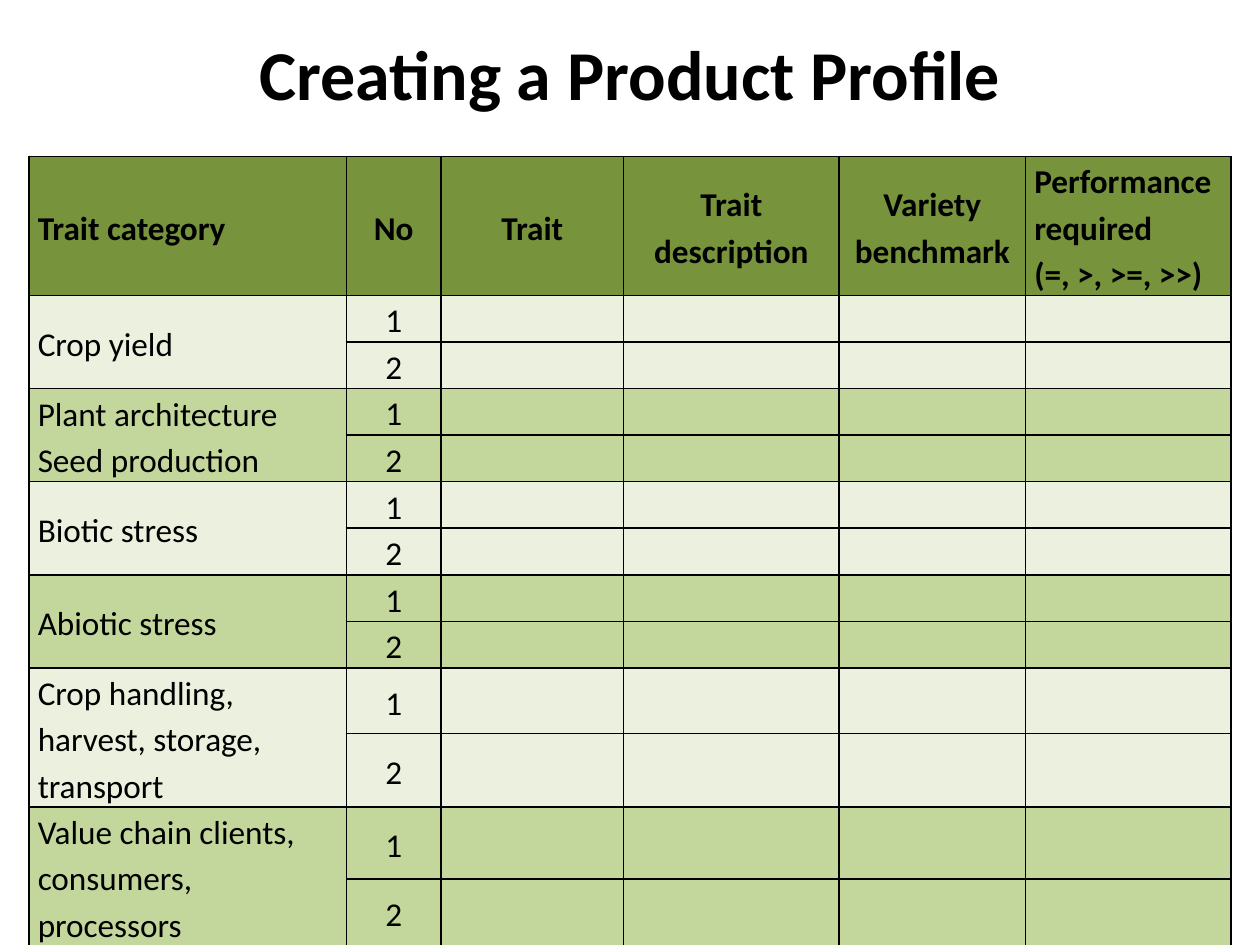
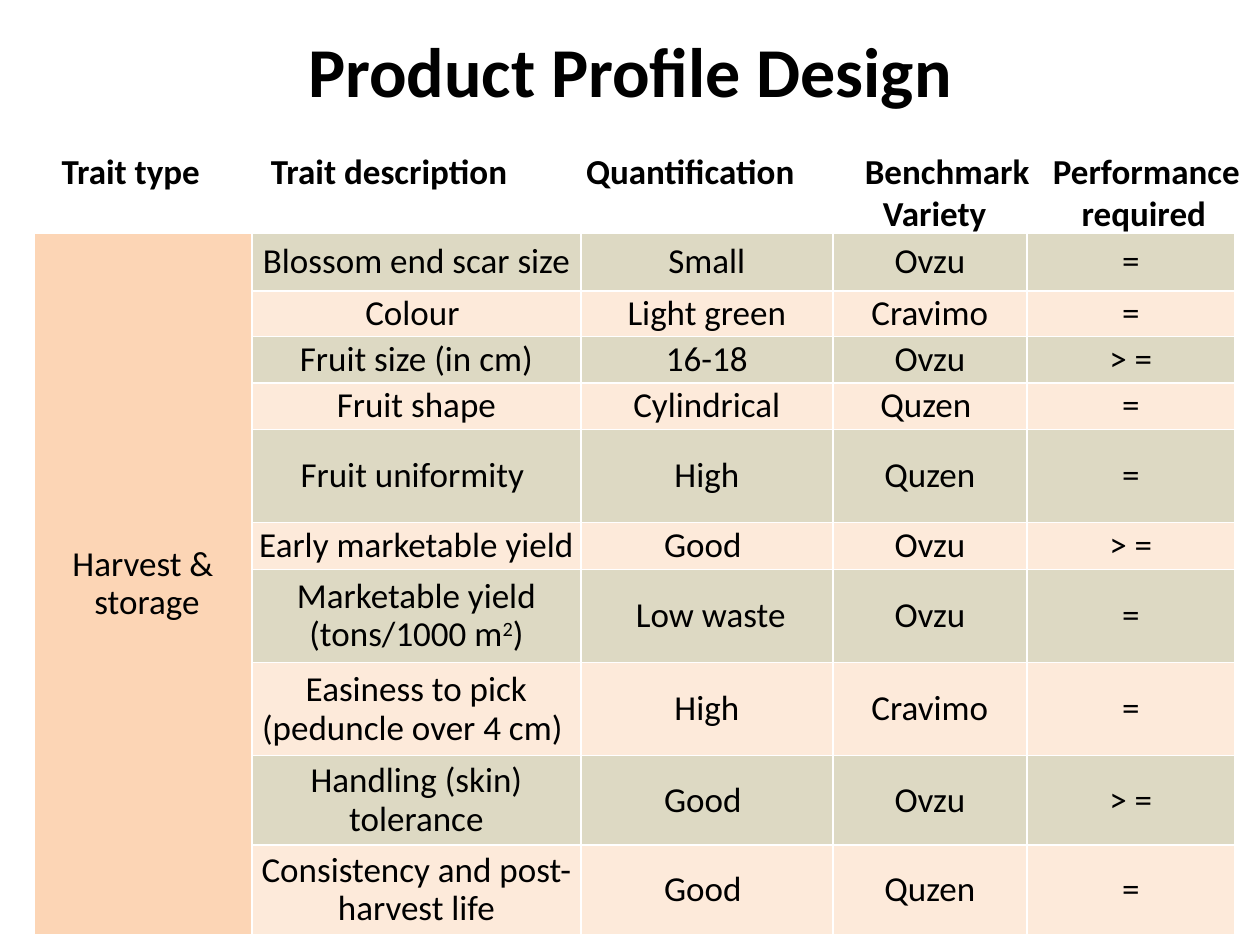
from pptx import Presentation
from pptx.dml.color import RGBColor
from pptx.enum.text import MSO_ANCHOR as Anchor, MSO_AUTO_SIZE as AutoSize, PP_ALIGN as Align
from pptx.oxml.ns import qn
from pptx.util import Inches, Pt
from lxml.etree import SubElement

FONT = "Calibri"
BLACK = RGBColor(0x00, 0x00, 0x00)
WHITE = RGBColor(0xFF, 0xFF, 0xFF)
HEADER_GREEN = RGBColor(0x77, 0x93, 0x3C)
PALE_GREEN = RGBColor(0xEB, 0xF1, 0xDE)
MID_GREEN = RGBColor(0xC3, 0xD6, 0x9B)
PEACH = RGBColor(0xFC, 0xD5, 0xB5)
TAN = RGBColor(0xDD, 0xD9, 0xC3)
PALE_PEACH = RGBColor(0xFD, 0xEA, 0xDA)


def add_text(paragraph, text, size, bold=False):
    for line_no, line in enumerate(text.split("\n")):
        if line_no:
            paragraph.add_line_break()
        before, squared, after = line.partition("²")
        for part, raised in ((before, False), ("2" if squared else "", True), (after, False)):
            if part:
                run = paragraph.add_run()
                run.text = part
                run.font.name = FONT
                run.font.size = Pt(size)
                run.font.bold = bold
                run.font.color.rgb = BLACK
                if raised:
                    run.font._element.set("baseline", "30000")


def style_cell(cell, fill, border, side_margin):
    cell.margin_left = cell.margin_right = Inches(side_margin)
    cell.margin_top = cell.margin_bottom = 0
    cell.vertical_anchor = Anchor.MIDDLE
    properties = cell._tc.get_or_add_tcPr()
    for side in ("a:lnL", "a:lnR", "a:lnT", "a:lnB"):
        line = SubElement(properties, qn(side), w=str(Pt(1)))
        color = SubElement(SubElement(line, qn("a:solidFill")), qn("a:srgbClr"))
        color.set("val", str(border))
    cell.fill.solid()
    cell.fill.fore_color.rgb = fill


deck = Presentation()
deck.slide_width, deck.slide_height = Inches(10), Inches(7.5)

SLIDES = [
    ("Creating a Product Profile", (0.5, 0.17, 9, 0.81), (0.23, 1.24, 9.54, 6.26),
     [2.52, 0.75, 1.45, 1.71, 1.48, 1.63],
     [1.1] + [0.37] * 8 + [0.52, 0.58, 0.57, 0.53]),
    ("Product Profile Design", (1.19, 0.27, 7.62, 0.56), (0.27, 1.85, 9.53, 5.57),
     [1.73, 2.61, 2, 1.54, 1.65],
     [0.46, 0.36, 0.37, 0.37, 0.74, 0.37, 0.74, 0.74, 0.71, 0.71]),
]
tables = []
for heading, title_box, table_box, widths, heights in SLIDES:
    slide = deck.slides.add_slide(deck.slide_layouts[5])
    title = slide.shapes.title
    title.left, title.top, title.width, title.height = map(Inches, title_box)
    title.text_frame.auto_size = AutoSize.NONE
    title.text_frame.vertical_anchor = Anchor.MIDDLE
    title.text_frame.paragraphs[0].alignment = Align.CENTER
    add_text(title.text_frame.paragraphs[0], heading, 40, True)

    table = slide.shapes.add_table(len(heights), len(widths), *map(Inches, table_box)).table
    table.first_row = table.horz_banding = False
    for column, width in zip(table.columns, widths):
        column.width = Inches(width)
    for row, height in zip(table.rows, heights):
        row.height = Inches(height)
    tables.append(table)

trait_form, trait_profile = tables

FORM_HEADERS = ["Trait category", "No", "Trait", "Trait description", "Variety benchmark",
                "Performance required\n(=, >, >=, >>)"]
CATEGORIES = ["Crop yield", "Plant architecture \nSeed production", "Biotic stress",
              "Abiotic stress", "Crop handling, harvest, storage, transport",
              "Value chain clients, \nconsumers, processors"]
form_rows = [FORM_HEADERS]
for category in CATEGORIES:
    form_rows += [[category, "1", "", "", "", ""], ["", "2", "", "", "", ""]]

for row_no, texts in enumerate(form_rows):
    band = (row_no - 1) // 2
    fill = (PALE_GREEN, MID_GREEN)[band % 2] if row_no else HEADER_GREEN
    for col_no, text in enumerate(texts):
        cell = trait_form.cell(row_no, col_no)
        style_cell(cell, fill, BLACK, 0.07)
        if text:
            if col_no == 1 and 0 < row_no < 9:
                cell.vertical_anchor = Anchor.TOP
            paragraph = cell.text_frame.paragraphs[0]
            paragraph.alignment = Align.LEFT if col_no in (0, 5) else Align.CENTER
            paragraph.line_spacing = 1.15
            paragraph.space_after = Pt(10)
            add_text(paragraph, text, 19, row_no == 0)
for first in range(1, len(form_rows), 2):
    trait_form.cell(first, 0).merge(trait_form.cell(first + 1, 0))

TRAITS = [
    ("Blossom end scar size", "Small", "Ovzu", "="),
    ("Colour ", "Light green", "Cravimo", "="),
    ("Fruit size (in cm)", "16-18", "Ovzu", "> ="),
    ("Fruit shape", "Cylindrical", "Quzen ", "="),
    ("Fruit uniformity ", "High", "Quzen", "="),
    ("Early marketable yield", "Good ", "Ovzu", "> ="),
    ("Marketable yield (tons/1000 m²)", " Low waste", "Ovzu", "="),
    ("Easiness to pick (peduncle over 4 cm) ", "High", "Cravimo", "="),
    ("Handling (skin) tolerance", "Good ", "Ovzu", "> ="),
    ("Consistency and post-harvest life", "Good ", "Quzen", "="),
]
for row_no, trait in enumerate(TRAITS):
    trait_type = "" if row_no else "Harvest &\n storage"
    for col_no, text in enumerate((trait_type, *trait)):
        cell = trait_profile.cell(row_no, col_no)
        style_cell(cell, (TAN, PALE_PEACH)[row_no % 2] if col_no else PEACH, WHITE, 0)
        if text:
            paragraph = cell.text_frame.paragraphs[0]
            paragraph.alignment = Align.CENTER
            paragraph.line_spacing = 0.9
            add_text(paragraph, text, 20)
trait_profile.cell(0, 0).merge(trait_profile.cell(len(TRAITS) - 1, 0))

HEADING_LINES = [
    [("Trait type", 0.61), ("Trait description", 2.66), ("Quantification", 5.05),
     ("Benchmark", 7.09), ("Performance", 8.67)],
    [("Variety", 6.99), ("required", 8.65)],
]
headings = deck.slides[1].shapes.add_textbox(
    Inches(0.33), Inches(1.14), Inches(9.67), Inches(0.77)).text_frame
headings.word_wrap = True
headings.auto_size = AutoSize.SHAPE_TO_FIT_TEXT
for line_no, labels in enumerate(HEADING_LINES):
    paragraph = headings.add_paragraph() if line_no else headings.paragraphs[0]
    stops = SubElement(paragraph._p.get_or_add_pPr(), qn("a:tabLst"))
    for label, center in labels:
        SubElement(stops, qn("a:tab"), pos=str(Inches(center)), algn="ctr")
        add_text(paragraph, "\t" + label, 20, True)

deck.save("out.pptx")
